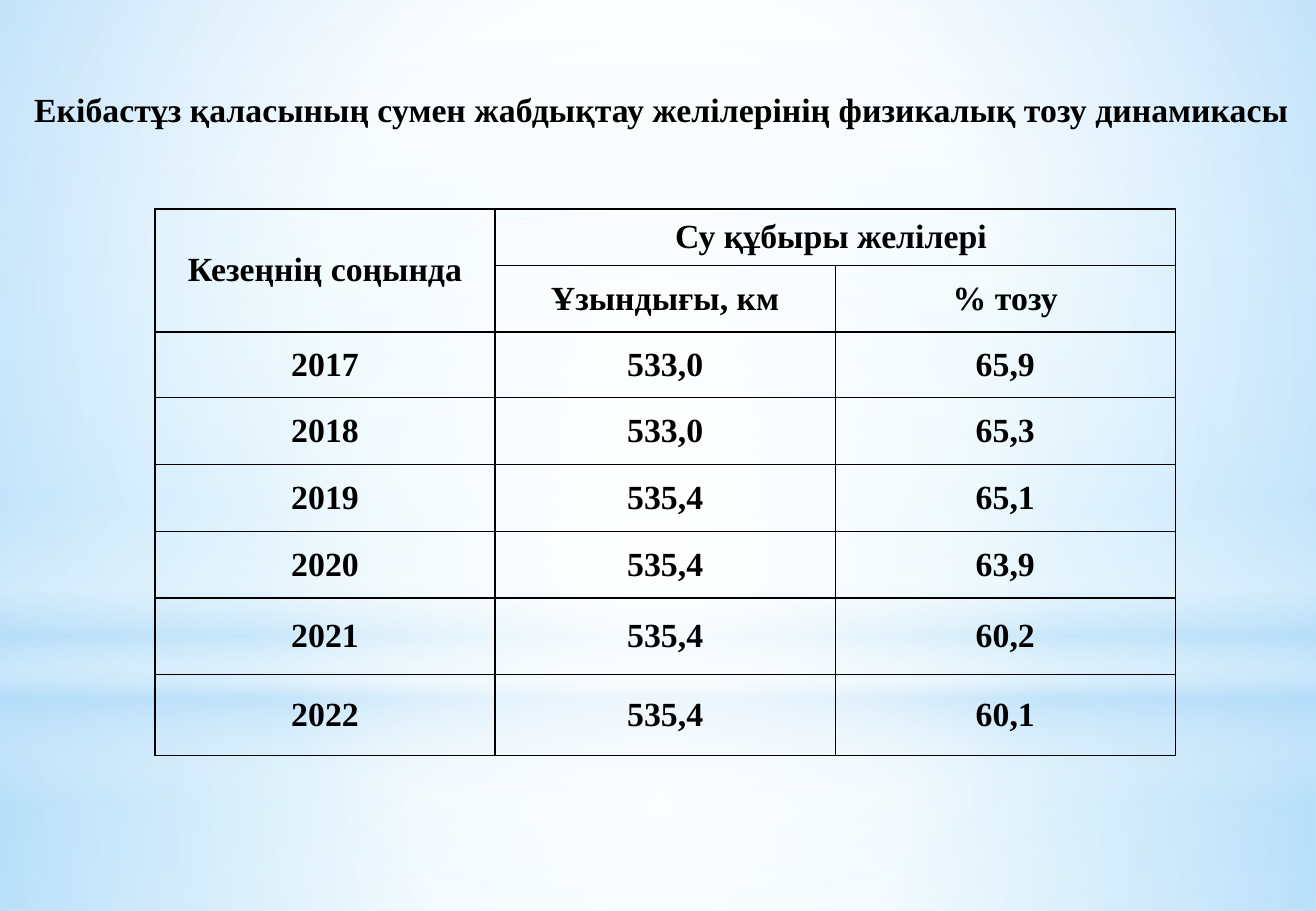
from dataclasses import dataclass

from lxml import etree
from pptx import Presentation
from pptx.dml.color import RGBColor
from pptx.enum import shapes, text
from pptx.oxml import ns
from pptx.util import Cm, Pt


@dataclass(frozen=True)
class Theme:
    font: str = "Times New Roman"
    size: int = 20
    ink: str = "000000"
    white: str = "FFFFFF"
    sky: str = "B4DCFA"
    border: int = 1
    backdrop: tuple = ((0, "F7FCFE"), (74, "B7E8FA"), (83, "B7E8FA"), (100, "CFF0FB"))


THEME = Theme()
WIDTH, HEIGHT, HORIZON = 27.51, 19.05, 14.17

TITLE = "Екібастұз қаласының сумен жабдықтау желілерінің физикалық тозу динамикасы"
WEAR_ROWS = [
    ("Кезеңнің соңында", "Су құбыры желілері ", ""),
    ("", "Ұзындығы, км", "% тозу"),
    ("2017", "533,0", "65,9"),
    ("2018", "533,0", "65,3"),
    ("2019", "535,4", "65,1"),
    ("2020", "535,4", "63,9"),
    ("2021", "535,4", "60,2"),
    ("2022", "535,4", "60,1"),
]
ROW_HEIGHTS = [1.18, 1.39, 1.38, 1.4, 1.4, 1.39, 1.6, 1.69]
COLUMN_WIDTH = 7.11


def add_node(parent, tag, **attributes):
    node = etree.SubElement(parent, ns.qn(tag))
    for key, value in attributes.items():
        node.set(key, str(value))
    return node


def set_gradient(fill, owner, stops, radial=False):
    """Stops are (position %, colour, optional opacity %)."""
    fill.gradient()
    gradient = owner.find(".//" + ns.qn("a:gradFill"))
    for child in list(gradient):
        gradient.remove(child)
    stop_list = add_node(gradient, "a:gsLst")
    for position, colour, *opacity in stops:
        stop = add_node(stop_list, "a:gs", pos=position * 1000)
        tint = add_node(stop, "a:srgbClr", val=colour)
        if opacity:
            add_node(tint, "a:alpha", val=opacity[0] * 1000)
    if radial:
        focus = add_node(gradient, "a:path", path="circle")
        add_node(focus, "a:fillToRect", l=50000, t=50000, r=50000, b=50000)
    else:
        add_node(gradient, "a:lin", ang=90 * 60000, scaled=0)


def add_glow(slide, kind, top, height, stops, radial=True):
    glow = slide.shapes.add_shape(kind, 0, Cm(top), Cm(WIDTH), Cm(height))
    glow.shadow.inherit = False
    glow.line.fill.background()
    set_gradient(glow.fill, glow.element, stops, radial)


def write_text(frame, wording):
    frame.text = wording
    paragraph = frame.paragraphs[0]
    paragraph.alignment = text.PP_ALIGN.CENTER
    font = paragraph.font
    for run in paragraph.runs:
        font = run.font
    font.name, font.size, font.bold = THEME.font, Pt(THEME.size), True
    font.color.rgb = RGBColor.from_string(THEME.ink)


def add_title(slide):
    title = slide.shapes.add_textbox(Cm(0.15), Cm(1.73), Cm(27.36), Cm(1.12))
    title.text_frame.word_wrap = True
    title.text_frame.auto_size = text.MSO_AUTO_SIZE.SHAPE_TO_FIT_TEXT
    write_text(title.text_frame, TITLE)


def style_cell(cell):
    properties = cell._tc.get_or_add_tcPr()
    for side in ("a:lnL", "a:lnR", "a:lnT", "a:lnB"):
        border = add_node(properties, side, w=Pt(THEME.border))
        add_node(add_node(border, "a:solidFill"), "a:srgbClr", val=THEME.ink)
    cell.fill.background()
    cell.vertical_anchor = text.MSO_ANCHOR.MIDDLE
    cell.margin_left = cell.margin_right = Cm(0.15)
    cell.margin_top = cell.margin_bottom = 0


def add_wear_table(slide):
    wear = slide.shapes.add_table(
        len(WEAR_ROWS), 3, Cm(3.24), Cm(4.37),
        Cm(3 * COLUMN_WIDTH), Cm(sum(ROW_HEIGHTS))).table
    wear.first_row = wear.horz_banding = False
    for column in wear.columns:
        column.width = Cm(COLUMN_WIDTH)
    for r, (height, wordings) in enumerate(zip(ROW_HEIGHTS, WEAR_ROWS)):
        wear.rows[r].height = Cm(height)
        for c, wording in enumerate(wordings):
            style_cell(wear.cell(r, c))
            write_text(wear.cell(r, c).text_frame, wording)
    # Two-level heading
    wear.cell(0, 0).merge(wear.cell(1, 0))
    wear.cell(0, 1).merge(wear.cell(0, 2))


def add_backdrop(slide):
    white, sky = THEME.white, THEME.sky
    rectangle, oval = shapes.MSO_SHAPE.RECTANGLE, shapes.MSO_SHAPE.OVAL
    background = slide.background
    set_gradient(background.fill, slide.element, THEME.backdrop)
    # Floor and sky
    add_glow(slide, rectangle, HORIZON, HEIGHT - HORIZON,
             [(0, white, 91), (37, white, 76), (100, sky, 79)])
    add_glow(slide, rectangle, 0, HORIZON,
             [(0, white, 89), (48, white, 62), (100, sky, 79)])
    # Horizon band and central light
    add_glow(slide, rectangle, 10.46, 6.35,
             [(0, white, 0), (29, white, 30), (45, sky, 40),
              (55, white, 26), (65, sky, 60), (100, white, 0)], radial=False)
    add_glow(slide, oval, 4.45, HORIZON, [(0, white), (56, white, 0)])


def main():
    deck = Presentation()
    deck.slide_width, deck.slide_height = Cm(WIDTH), Cm(HEIGHT)
    slide = deck.slides.add_slide(deck.slide_layouts[6])
    add_backdrop(slide)
    add_title(slide)
    add_wear_table(slide)
    deck.save("out.pptx")


if __name__ == "__main__":
    main()
